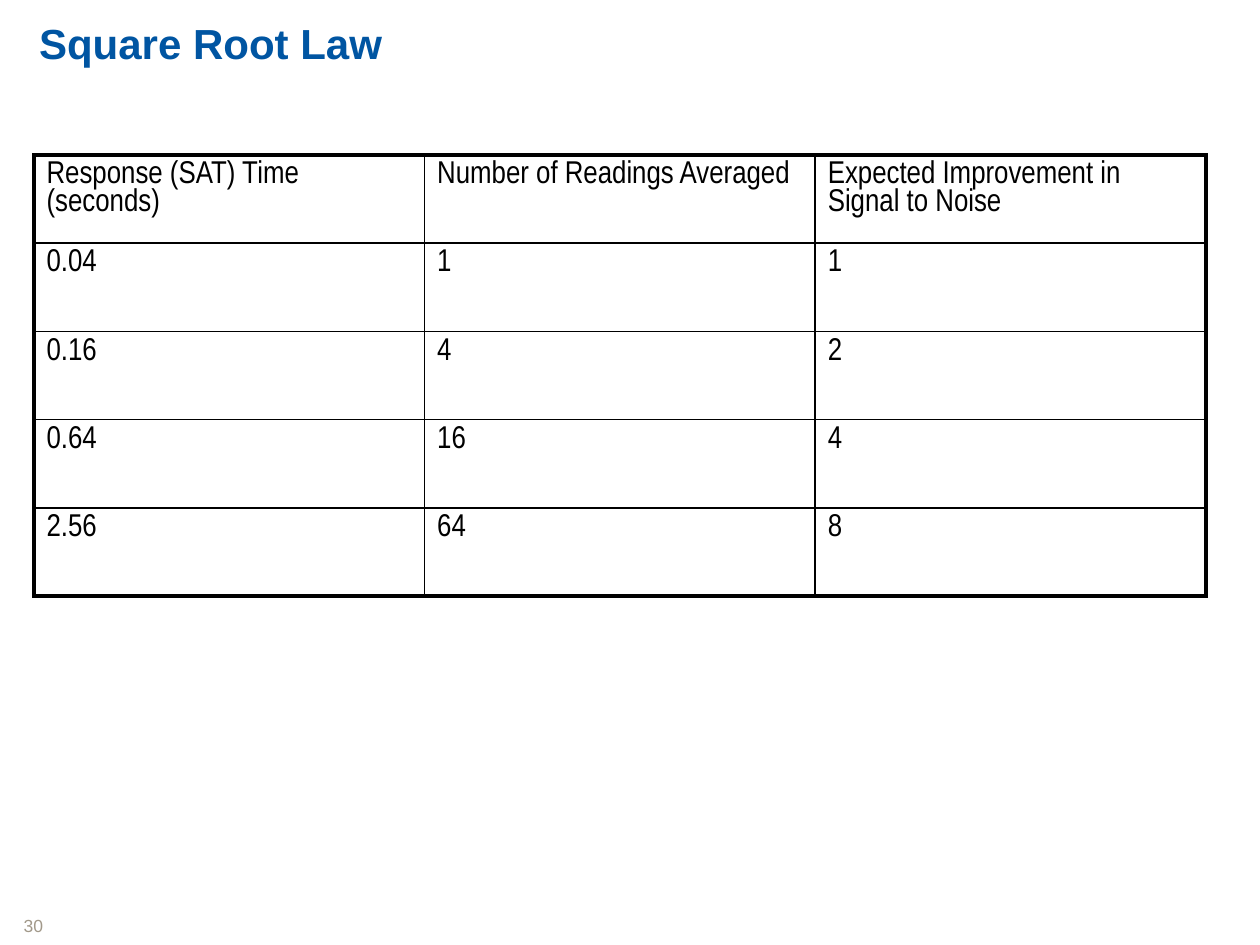
from pptx import Presentation
from pptx.dml.color import RGBColor
from pptx.enum.text import MSO_ANCHOR, PP_ALIGN
from pptx.oxml.ns import qn
from pptx.util import Inches, Pt
from lxml import etree

BOTTOM = MSO_ANCHOR.BOTTOM
RIGHT = PP_ALIGN.RIGHT
TITLE_ONLY = 5

BLUE, GREY, BLACK = "0055A2", "A2998A", "000000"
OUTER_LINE, INNER_LINE = 2.25, 1
COLUMN_WIDTH, ROW_HEIGHT = 3.1, 0.7

READINGS = [
    ("Response (SAT) Time (seconds)", "Number of Readings Averaged",
     "Expected Improvement in Signal to Noise"),
    ("0.04", "1", "1"),
    ("0.16", "4", "2"),
    ("0.64", "16", "4"),
    ("2.56", "64", "8"),
]


def style(paragraph, font_name, size, color, bold=False):
    font = paragraph.font
    font.name, font.size, font.bold = font_name, Pt(size), bold
    font.color.rgb = RGBColor.from_string(color)


def place(shape, left, top, width, height):
    shape.left, shape.top = Inches(left), Inches(top)
    shape.width, shape.height = Inches(width), Inches(height)


def add_title(slide, text):
    title = slide.shapes.title
    place(title, 0.27, 0.09, 7.95, 0.47)
    frame = title.text_frame
    frame.text = text
    frame.word_wrap = True
    frame.vertical_anchor = BOTTOM
    frame.margin_left = frame.margin_right = Inches(0.04)
    frame.margin_top = frame.margin_bottom = Inches(0.02)
    heading = frame.paragraphs[0]
    heading.alignment = PP_ALIGN.LEFT
    style(heading, "Arial", 24, BLUE, bold=True)


def add_border(cell, side, width):
    """Draw one side (L, R, T or B) of a cell; call before filling the cell."""
    line = etree.SubElement(cell._tc.get_or_add_tcPr(), qn(f"a:ln{side}"),
                            w=str(Pt(width)))
    fill = etree.SubElement(line, qn("a:solidFill"))
    etree.SubElement(fill, qn("a:srgbClr"), val=BLACK)


def add_readings_table(slide, left, top):
    row_count, column_count = len(READINGS), len(READINGS[0])
    table = slide.shapes.add_table(
        row_count, column_count, Inches(left), Inches(top),
        Inches(column_count * COLUMN_WIDTH), Inches(row_count * ROW_HEIGHT)).table
    table.first_row = table.horz_banding = False
    for r, values in enumerate(READINGS):
        for c, value in enumerate(values):
            cell = table.cell(r, c)
            cell.text = value
            entry = cell.text_frame.paragraphs[0]
            entry.line_spacing = 0.95
            style(entry, "Arial Narrow", 18, BLACK)
            on_edge = {"L": c == 0, "R": c == column_count - 1,
                       "T": r == 0, "B": r == row_count - 1}
            for side, outer in on_edge.items():
                add_border(cell, side, OUTER_LINE if outer else INNER_LINE)
            cell.fill.background()


def add_page_number(slide, number):
    box = slide.shapes.add_textbox(0, Inches(7.21), Inches(0.44), Inches(0.24))
    box.text_frame.word_wrap = True
    box.text_frame.text = number
    label = box.text_frame.paragraphs[0]
    label.alignment = RIGHT
    style(label, "Arial", 10, GREY)


def main():
    presentation = Presentation()
    presentation.slide_width, presentation.slide_height = Inches(10), Inches(7.5)
    slide = presentation.slides.add_slide(presentation.slide_layouts[TITLE_ONLY])
    add_page_number(slide, "30")
    add_title(slide, "Square Root Law")
    add_readings_table(slide, 0.27, 1.23)
    presentation.save("out.pptx")


if __name__ == "__main__":
    main()
